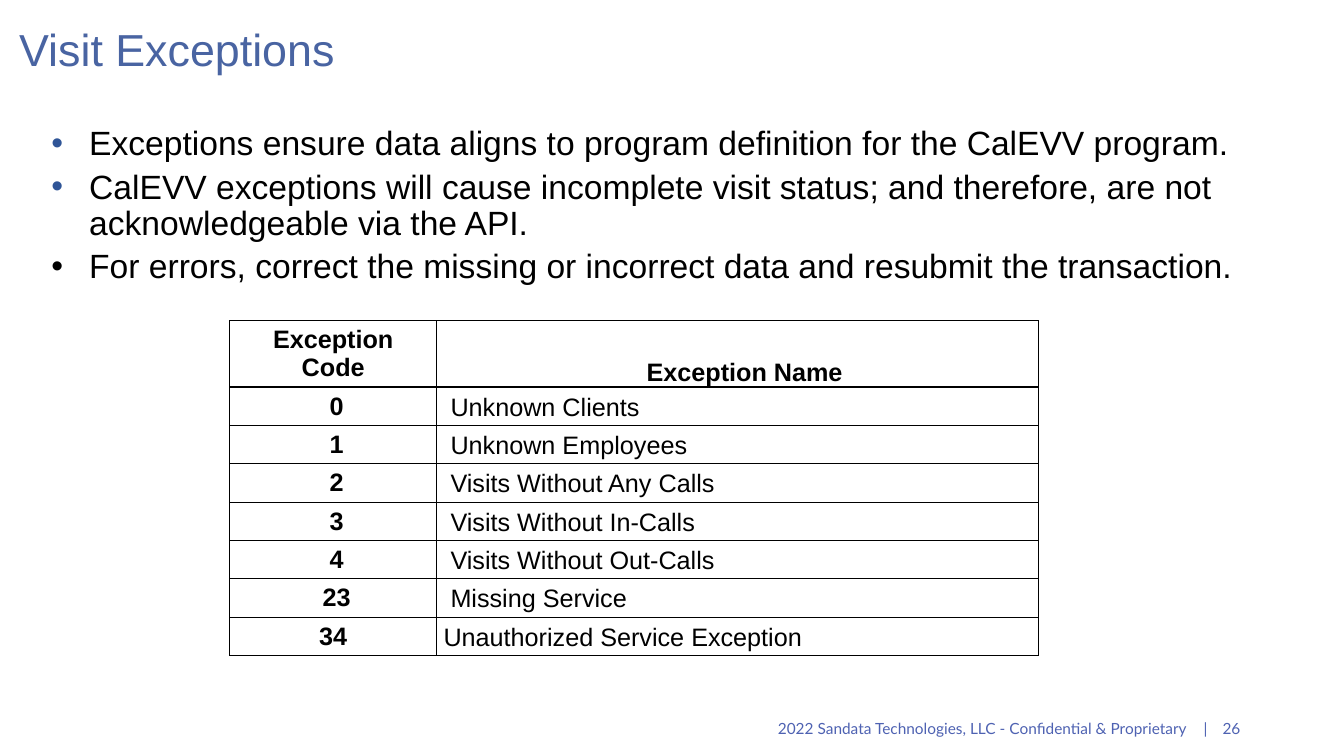
from pptx import Presentation
from pptx.dml.color import RGBColor
from pptx.enum.text import MSO_ANCHOR, MSO_AUTO_SIZE, PP_ALIGN
from pptx.oxml.ns import qn
from pptx.util import Pt
from lxml.etree import SubElement

COLORS = {"title": "4964A2", "bullet": "2F5597", "text": "000000", "footer": "4E62B2"}
BULLETS = [
    ("Exceptions ensure data aligns to program definition for the CalEVV program.", "bullet"),
    ("CalEVV exceptions will cause incomplete visit status; and therefore, "
     "are not acknowledgeable via the API.", "bullet"),
    ("For errors, correct the missing or incorrect data and resubmit the transaction.", "text"),
]
EXCEPTIONS = [
    ("0", "Unknown Clients"),
    ("1", "Unknown Employees"),
    ("2", "Visits Without Any Calls"),
    ("3", "Visits Without In-Calls"),
    ("4", "Visits Without Out-Calls"),
    ("23", "Missing Service"),
    ("34", "Unauthorized Service Exception"),
]
FOOTER = "\t2022 Sandata Technologies, LLC - Confidential & Proprietary\t|\t26"


def write(para, text, size=18, color="text", font="Arial", bold=False,
          align=PP_ALIGN.LEFT, line=1.0, before=0):
    para.alignment = align
    para.line_spacing = line
    para.space_before = Pt(before)
    span = para.add_run()
    span.text = text
    span.font.size = Pt(size)
    span.font.name = font
    span.font.bold = bold
    span.font.color.rgb = RGBColor.from_string(COLORS[color])


class SlideBuilder:
    def __init__(self, deck):
        self.page = deck.slides.add_slide(deck.slide_layouts[1])

    def place(self, box, left, top, width, height, anchor):
        box.left, box.top, box.width, box.height = map(Pt, (left, top, width, height))
        frame = box.text_frame
        frame.word_wrap = True
        frame.auto_size = MSO_AUTO_SIZE.NONE
        frame.vertical_anchor = anchor
        return frame

    def title(self, text, *area):
        frame = self.place(self.page.shapes.title, *area, MSO_ANCHOR.MIDDLE)
        write(frame.paragraphs[0], text, size=32, color="title", line=0.9)

    def bullets(self, items, *area):
        frame = self.place(self.page.placeholders[1], *area, MSO_ANCHOR.TOP)
        for index, (text, color) in enumerate(items):
            para = frame.add_paragraph() if index else frame.paragraphs[0]
            write(para, text, size=24, line=0.9, before=5 if index else 0)
            properties = para._p.get_or_add_pPr()
            properties.set("marL", str(Pt(27)))
            properties.set("indent", str(Pt(-27)))
            tint = SubElement(properties, qn("a:buClr"))
            SubElement(tint, qn("a:srgbClr"), val=COLORS[color])
            SubElement(properties, qn("a:buFont"), typeface="Arial")
            SubElement(properties, qn("a:buChar"), char="•")

    def footer(self, text, stops, *area):
        box = self.page.shapes.add_textbox(0, 0, 0, 0)
        frame = self.place(box, *area, MSO_ANCHOR.MIDDLE)
        para = frame.paragraphs[0]
        write(para, text, size=11, color="footer", font="Lato")
        tabs = SubElement(para._p.get_or_add_pPr(), qn("a:tabLst"))
        for position, align in stops:
            SubElement(tabs, qn("a:tab"), pos=str(Pt(position)), algn=align)

    def cell(self, cell, text, margins, anchor, bottom=1, **style):
        cell.margin_left, cell.margin_top, cell.margin_right, cell.margin_bottom = map(Pt, margins)
        cell.vertical_anchor = anchor
        write(cell.text_frame.paragraphs[0], text, **style)
        properties = cell._tc.get_or_add_tcPr()
        for side, width in (("L", 1), ("R", 1), ("T", 1), ("B", bottom)):
            edge = SubElement(properties, qn(f"a:ln{side}"), w=str(Pt(width)))
            fill = SubElement(edge, qn("a:solidFill"))
            SubElement(fill, qn("a:srgbClr"), val=COLORS["text"])
        cell.fill.background()

    def table(self, rows, left, top, widths, header_height, row_height):
        height = header_height + row_height * len(rows)
        table = self.page.shapes.add_table(
            len(rows) + 1, len(widths), Pt(left), Pt(top), Pt(sum(widths)), Pt(height)).table
        table.first_row = table.horz_banding = False
        for column, width in zip(table.columns, widths):
            column.width = Pt(width)
        for index, row in enumerate(table.rows):
            row.height = Pt(row_height if index else header_height)
        heading = {"bold": True, "align": PP_ALIGN.CENTER}
        self.cell(table.cell(0, 0), "Exception Code", (7.2, 3.6, 7.2, 3.6),
                  MSO_ANCHOR.BOTTOM, bottom=2, **heading)
        self.cell(table.cell(0, 1), "Exception Name", (10, 0, 0, 0),
                  MSO_ANCHOR.BOTTOM, bottom=2, line=1.07, **heading)
        for index, (code, name) in enumerate(rows, 1):
            shift = 0 if index == len(rows) else 5
            self.cell(table.cell(index, 0), code, (7.2 + shift, 3.6, 7.2, 3.6),
                      MSO_ANCHOR.TOP, **heading)
            self.cell(table.cell(index, 1), name, (5 + shift, 0, 5, 0),
                      MSO_ANCHOR.MIDDLE, line=1.07)


def main():
    deck = Presentation()
    deck.slide_width, deck.slide_height = Pt(960), Pt(540)
    builder = SlideBuilder(deck)
    builder.title("Visit Exceptions", 6.5, 6.5, 828, 62)
    builder.bullets(BULLETS, 29.5, 87, 918, 126.7)
    builder.table(EXCEPTIONS, 164.2, 229, (147.6, 430.2), 47.5, 27.3)
    builder.footer(FOOTER, [(361, "r"), (374, "ctr"), (399, "r")], 480, 500.4, 414, 39.6)
    deck.save("out.pptx")


if __name__ == "__main__":
    main()
